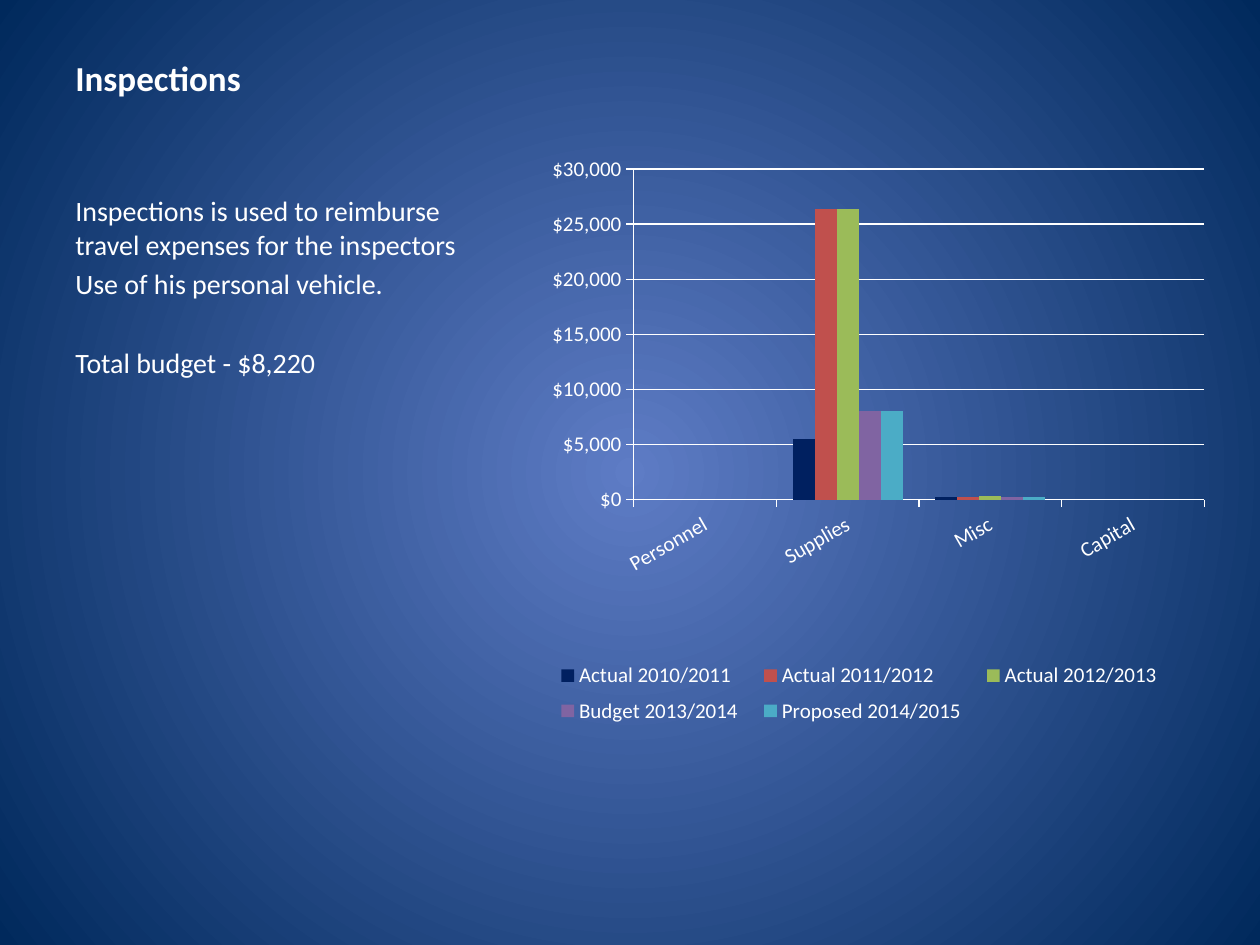
from dataclasses import dataclass

import lxml.etree
import pptx
import pptx.chart.data
import pptx.dml.color
import pptx.enum.chart
import pptx.enum.text
import pptx.oxml.ns
import pptx.util

Inches = pptx.util.Inches
Pt = pptx.util.Pt
qn = pptx.oxml.ns.qn


def rgb(code):
    return pptx.dml.color.RGBColor.from_string(code)


@dataclass(frozen=True)
class Theme:
    font: str = "Calibri"
    text: str = "FFFFFF"
    glow: str = "5E7CC5"
    edge: str = "00295C"
    series: tuple = ("002060", "C0504D", "9BBB59", "8064A2", "4BACC6")
    title_size: int = 20
    body_size: int = 16
    chart_size: int = 12
    line_width: float = 0.75


def write(paragraph, text, *, theme, size, bold=False, before=0):
    """Add one formatted run to a paragraph."""
    paragraph.space_before = Pt(before)
    run = paragraph.add_run()
    run.text = text
    style_font(run.font, theme, size, bold)


def style_font(font, theme, size, bold=False):
    font.name = theme.font
    font.size = Pt(size)
    font.bold = bold
    font.color.rgb = rgb(theme.text)


def place(element, index, inner=False, **box):
    """Give a plot area or legend a manual layout, in fractions of the chart."""
    for old in element.findall(qn("c:layout")):
        element.remove(old)
    layout = lxml.etree.Element(qn("c:layout"))
    manual = lxml.etree.SubElement(layout, qn("c:manualLayout"))
    settings = {"layoutTarget": "inner"} if inner else {}
    settings.update(xMode="edge", yMode="edge", **box)
    for tag, value in settings.items():
        lxml.etree.SubElement(manual, qn(f"c:{tag}")).set("val", str(value))
    element.insert(index, layout)


class SlideBuilder:
    def __init__(self, slide, theme):
        self.slide = slide
        self.theme = theme

    def background(self):
        fill = self.slide.background.fill
        fill.gradient()
        for stop, color in zip(fill.gradient_stops, (self.theme.glow, self.theme.edge)):
            stop.color.rgb = rgb(color)
        # Radial gradient from the slide centre
        gradient = self.slide.element.find(".//" + qn("a:gradFill"))
        for linear in gradient.findall(qn("a:lin")):
            gradient.remove(linear)
        radial = lxml.etree.SubElement(gradient, qn("a:path"), path="circle")
        lxml.etree.SubElement(radial, qn("a:fillToRect"),
                              l="50000", t="50000", r="50000", b="50000")

    def text(self, box, paragraphs, size, bold=False, anchor="TOP", top_inset=0.05):
        frame = self.slide.shapes.add_textbox(*map(Inches, box)).text_frame
        frame.word_wrap = True
        frame.margin_top = Inches(top_inset)
        frame.vertical_anchor = getattr(pptx.enum.text.MSO_ANCHOR, anchor)
        for index, (content, before) in enumerate(paragraphs):
            paragraph = frame.add_paragraph() if index else frame.paragraphs[0]
            write(paragraph, content, theme=self.theme, size=size, bold=bold, before=before)

    def column_chart(self, box, categories, series, number_format):
        theme = self.theme
        data = pptx.chart.data.CategoryChartData(number_format=number_format)
        data.categories = categories
        for name, values in series.items():
            data.add_series(name, values)
        chart = self.slide.shapes.add_chart(
            pptx.enum.chart.XL_CHART_TYPE.COLUMN_CLUSTERED, *map(Inches, box), data).chart
        chart.has_title = False
        style_font(chart.font, theme, theme.chart_size)

        # Columns
        plot = chart.plots[0]
        plot.gap_width = 150
        plot.overlap = 0
        plot.vary_by_categories = False
        for columns, color in zip(plot.series, theme.series):
            columns.format.fill.solid()
            columns.format.fill.fore_color.rgb = rgb(color)
            columns.invert_if_negative = False

        # Axes
        amounts, groups = chart.value_axis, chart.category_axis
        amounts.minimum_scale, amounts.maximum_scale = 0, 30000
        amounts.major_unit = 5000
        amounts.has_major_gridlines = True
        amounts.tick_labels.number_format = number_format
        amounts.tick_labels.number_format_is_linked = False
        for axis in (amounts, groups):
            axis.major_tick_mark = pptx.enum.chart.XL_TICK_MARK.OUTSIDE
            style_font(axis.tick_labels.font, theme, theme.chart_size)
        for part in (amounts, groups, amounts.major_gridlines):
            part.format.line.color.rgb = rgb(theme.text)
            part.format.line.width = Pt(theme.line_width)
        slant = groups.tick_labels.font  # ensures the label text properties exist
        slant.italic = False
        groups._element.find(qn("c:txPr")).find(qn("a:bodyPr")).set("rot", "-1800000")

        # Legend and plot positions
        chart.has_legend = True
        legend = chart.legend
        legend.position = pptx.enum.chart.XL_LEGEND_POSITION.BOTTOM
        legend.include_in_layout = False
        style_font(legend.font, theme, theme.chart_size)
        chart_part = chart.element.find(qn("c:chart"))
        place(chart_part.find(qn("c:plotArea")), 0, inner=True,
              x=0.17, y=0.08, w=0.81, h=0.41)
        place(chart_part.find(qn("c:legend")), 1, x=0.04, y=0.68, w=0.9, h=0.1)


def main():
    deck = pptx.Presentation()
    deck.slide_width, deck.slide_height = Inches(10), Inches(7.5)
    builder = SlideBuilder(deck.slides.add_slide(deck.slide_layouts[6]), Theme())
    theme = builder.theme
    builder.background()

    # Heading and explanation
    builder.text((0.5, 0.3, 3.29, 0.53), [("Inspections", 0)],
                 theme.title_size, bold=True, anchor="BOTTOM")
    explanation = [
        ("Inspections is used to reimburse travel expenses for the inspectors", 0),
        ("Use of his personal vehicle.", 3.2),
        ("Total budget - $8,220", 26),
    ]
    builder.text((0.5, 1.17, 3.29, 5.53), explanation, theme.body_size, top_inset=0.37)

    # Spending by category and year
    spending = {
        "Actual 2010/2011": (None, 5500, 200, None),
        "Actual 2011/2012": (None, 26400, 200, None),
        "Actual 2012/2013": (None, 26400, 300, None),
        "Budget 2013/2014": (None, 8000, 200, None),
        "Proposed 2014/2015": (None, 8000, 200, None),
    }
    builder.column_chart((4.08, 0.83, 5.59, 6.4),
                         ("Personnel", "Supplies", "Misc", "Capital"),
                         spending, '"$"#,##0')

    deck.save("out.pptx")


if __name__ == "__main__":
    main()
